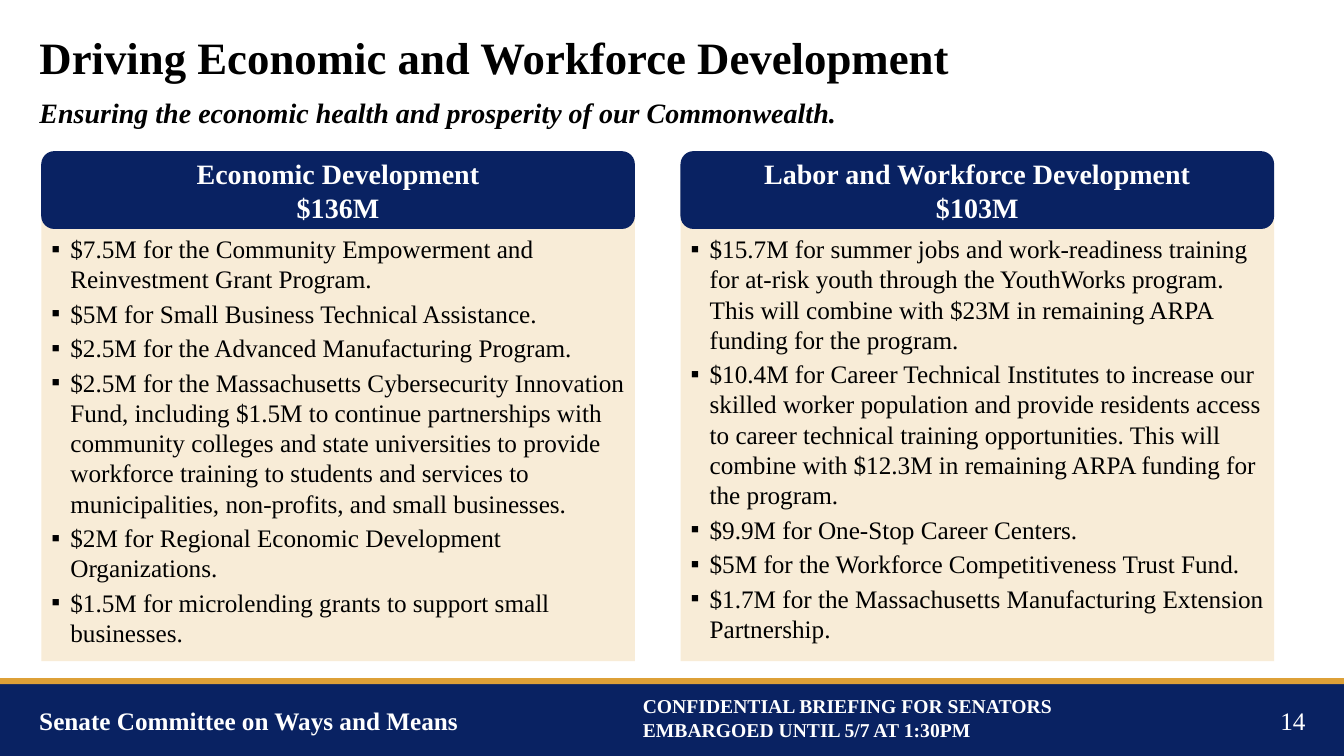
from dataclasses import dataclass

from lxml.etree import SubElement
from pptx import Presentation
from pptx.dml.color import RGBColor
from pptx.enum.shapes import MSO_SHAPE
from pptx.enum.text import MSO_ANCHOR, MSO_AUTO_SIZE, PP_ALIGN
from pptx.oxml.ns import qn
from pptx.util import Cm, Pt


@dataclass(frozen=True)
class Theme:
    font: str = "Times New Roman"
    navy: RGBColor = RGBColor(0x09, 0x22, 0x62)
    gold: RGBColor = RGBColor(0xDD, 0xA0, 0x37)
    cream: RGBColor = RGBColor(0xF8, 0xEC, 0xD7)
    white: RGBColor = RGBColor(0xFF, 0xFF, 0xFF)
    black: RGBColor = RGBColor(0, 0, 0)
    title: Pt = Pt(32)
    heading: Pt = Pt(20)
    body: Pt = Pt(18)
    notice: Pt = Pt(14)


THEME = Theme()
SLIDE_WIDTH, SLIDE_HEIGHT = Cm(33.87), Cm(19.05)

PROGRAMS = [
    (["Economic Development", "$136M"], [
        "$7.5M for the Community Empowerment and Reinvestment Grant Program.",
        "$5M for Small Business Technical Assistance.",
        "$2.5M for the Advanced Manufacturing Program.",
        "$2.5M for the Massachusetts Cybersecurity Innovation Fund, including $1.5M "
        "to continue partnerships with community colleges and state universities to "
        "provide workforce training to students and services to municipalities, "
        "non-profits, and small businesses.",
        "$2M for Regional Economic Development Organizations.",
        "$1.5M for microlending grants to support small businesses.",
    ]),
    (["Labor and Workforce Development", "$103M"], [
        "$15.7M for summer jobs and work-readiness training for at-risk youth through "
        "the YouthWorks program. This will combine with $23M in remaining ARPA funding "
        "for the program.",
        "$10.4M for Career Technical Institutes to increase our skilled worker "
        "population and provide residents access to career technical training "
        "opportunities. This will combine with $12.3M in remaining ARPA funding for "
        "the program.",
        "$9.9M for One-Stop Career Centers.",
        "$5M for the Workforce Competitiveness Trust Fund.",
        "$1.7M for the Massachusetts Manufacturing Extension Partnership.",
    ]),
]


def place(holder, left, top, width, height):
    holder.left, holder.top, holder.width, holder.height = left, top, width, height


def write(frame, lines, size, color, bold=False, italic=False,
          align=PP_ALIGN.LEFT, anchor=MSO_ANCHOR.MIDDLE, spacing=1.0, bulleted=False):
    """Fill a text frame with one evenly formatted paragraph per line."""
    frame.auto_size = MSO_AUTO_SIZE.NONE
    frame.word_wrap = True
    frame.vertical_anchor = anchor
    for number, line in enumerate(lines):
        paragraph = frame.paragraphs[0] if number == 0 else frame.add_paragraph()
        paragraph.text = line
        paragraph.alignment = align
        paragraph.line_spacing = spacing
        paragraph.space_before = Pt(0)
        if bulleted:
            paragraph.space_after = Pt(3)
            add_bullet(paragraph)
        font = paragraph.font
        font.name, font.size, font.bold, font.italic = THEME.font, size, bold, italic
        font.color.rgb = color


def add_bullet(paragraph):
    properties = paragraph._p.get_or_add_pPr()
    properties.set("marL", str(Cm(0.48)))
    properties.set("indent", str(-Cm(0.48)))
    SubElement(properties, qn("a:buChar")).set("char", "▪")


def add_block(slide, preset, color, left, top, width, height):
    block = slide.shapes.add_shape(preset, left, top, width, height)
    block.shadow.inherit = False
    block.fill.solid()
    block.fill.fore_color.rgb = color
    block.line.fill.background()
    return block


def add_titles(title, subtitle, left, top):
    place(title, left, top, Cm(30.02), Cm(1.73))
    write(title.text_frame, ["Driving Economic and Workforce Development"],
          THEME.title, THEME.black, bold=True, spacing=0.9)
    place(subtitle, left, top + Cm(1.75), Cm(31.06), Cm(0.97))
    write(subtitle.text_frame,
          ["Ensuring the economic health and prosperity of our Commonwealth."],
          THEME.heading, THEME.black, bold=True, italic=True, spacing=0.9)


def add_program(slide, panel, heading, items, left, top, width, height):
    """Set a list panel under an overlapping rounded heading."""
    overhang = Cm(0.76)
    place(panel, left, top + overhang, width, height - overhang)
    panel.fill.solid()
    panel.fill.fore_color.rgb = THEME.cream
    panel.text_frame.margin_top = Cm(1.31)
    write(panel.text_frame, items, THEME.body, THEME.black,
          anchor=MSO_ANCHOR.TOP, bulleted=True)
    banner = add_block(slide, MSO_SHAPE.ROUNDED_RECTANGLE, THEME.navy,
                       left, top, width, Cm(1.96))
    write(banner.text_frame, heading, THEME.heading, THEME.white, bold=True,
          align=PP_ALIGN.CENTER)


def add_footer(slide, top):
    add_block(slide, MSO_SHAPE.RECTANGLE, THEME.navy,
              0, top + Cm(0.07), SLIDE_WIDTH, SLIDE_HEIGHT - top - Cm(0.07))
    add_block(slide, MSO_SHAPE.RECTANGLE, THEME.gold, 0, top, SLIDE_WIDTH, Cm(0.15))
    notice = ["CONFIDENTIAL BRIEFING FOR SENATORS", "EMBARGOED UNTIL 5/7 AT 1:30PM"]
    for lines, left, drop, width, height, size, bold, align in [
        (["Senate Committee on Ways and Means"], 0.74, 0.56, 15.21, 1.02,
         THEME.body, True, PP_ALIGN.LEFT),
        (notice, 15.95, 0.28, 11.15, 1.45, THEME.notice, True, PP_ALIGN.LEFT),
        (["14"], 31.19, 0.56, 1.96, 1.02, THEME.body, False, PP_ALIGN.RIGHT),
    ]:
        label = slide.shapes.add_textbox(Cm(left), top + Cm(drop), Cm(width), Cm(height))
        write(label.text_frame, lines, size, THEME.white, bold=bold, align=align,
              anchor=MSO_ANCHOR.TOP)


def main():
    deck = Presentation()
    deck.slide_width, deck.slide_height = SLIDE_WIDTH, SLIDE_HEIGHT
    slide = deck.slides.add_slide(deck.slide_layouts.get_by_name("Comparison"))
    title, subtitle, left_list, spare, right_list = slide.placeholders
    spare.element.getparent().remove(spare.element)

    add_footer(slide, Cm(17.09))
    add_titles(title, subtitle, Cm(0.74), Cm(0.64))
    for column, (heading, items) in enumerate(PROGRAMS):
        add_program(slide, (left_list, right_list)[column], heading, items,
                    Cm(1.04 + 16.11 * column), Cm(3.81), Cm(14.96), Cm(12.85))
    deck.save("out.pptx")


if __name__ == "__main__":
    main()
